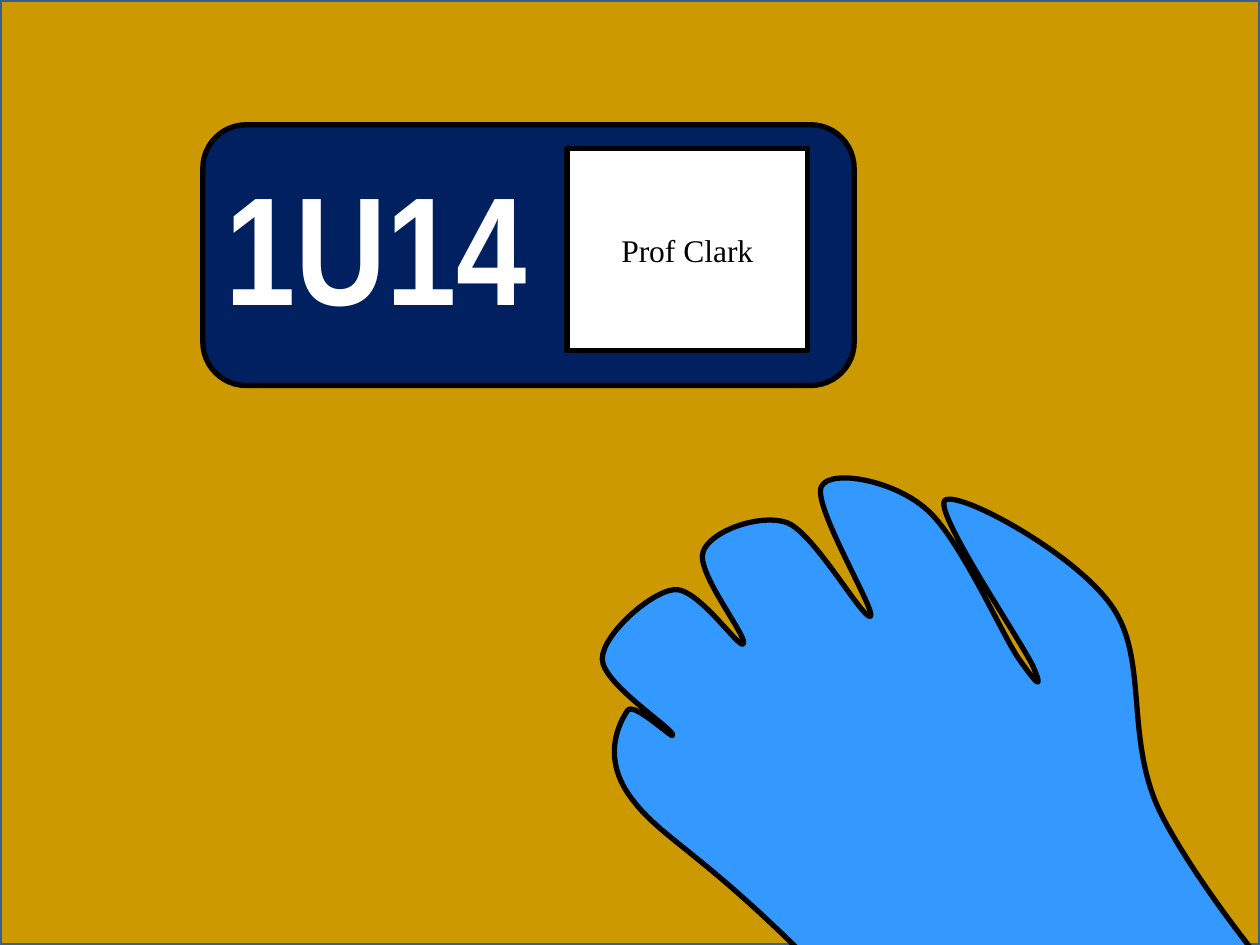
from math import cos, radians, sin

from lxml.etree import SubElement
from pptx import Presentation
from pptx.dml.color import RGBColor
from pptx.enum.shapes import MSO_SHAPE as Shape
from pptx.enum.text import MSO_ANCHOR as Anchor, MSO_AUTO_SIZE as AutoSize, PP_ALIGN as Align
from pptx.oxml.ns import qn
from pptx.util import Inches, Pt

WIDTH, HEIGHT = 10, 7.5
COLOURS = {
    "door": "CC9900", "edge": "3A5F8C", "sign": "002060", "card": "FFFFFF",
    "hand": "3399FF", "ink": "000000", "number": "FFFFFF",
}
ROOM, OCCUPANT = "1U14", "Prof Clark"
SIGN = (1.61, 0.99, 5.17, 2.07)
CARD = (4.5, 1.18, 1.91, 1.6)
NUMBER = (1.69, 1.15, 2.62, 1.58)

HAND_ANGLE = 322.7
HAND_START = (10.63, 8.31)
# Each row is one Bezier curve: two control points and an end point.
HAND_CURVES = [
    ((10.25, 7.98), (9.52, 7.05), (9.22, 6.47)),
    ((8.92, 5.88), (9.12, 5.24), (8.83, 4.82)),
    ((8.55, 4.4), (7.61, 3.89), (7.5, 3.97)),
    ((7.4, 4.05), (8.1, 5.08), (8.2, 5.29)),
    ((8.29, 5.5), (8.22, 5.42), (8.08, 5.22)),
    ((7.94, 5.01), (7.61, 4.26), (7.35, 4.04)),
    ((7.09, 3.81), (6.59, 3.72), (6.52, 3.86)),
    ((6.44, 4), (6.95, 4.84), (6.91, 4.89)),
    ((6.86, 4.94), (6.47, 4.24), (6.25, 4.15)),
    ((6.03, 4.07), (5.63, 4.22), (5.58, 4.38)),
    ((5.52, 4.54), (5.94, 5.06), (5.9, 5.11)),
    ((5.87, 5.16), (5.54, 4.66), (5.35, 4.68)),
    ((5.16, 4.7), (4.78, 5.04), (4.78, 5.23)),
    ((4.78, 5.42), (5.31, 5.76), (5.34, 5.83)),
    ((5.37, 5.9), (5.03, 5.56), (4.98, 5.64)),
    ((4.92, 5.73), (4.77, 6), (5, 6.32)),
    ((5.23, 6.64), (5.53, 6.74), (6.34, 7.54)),
    ((7.19, 8.32), (9.33, 10.46), (9.85, 11.12)),
]


def colour(name):
    return RGBColor.from_string(COLOURS[name])


def paint(shape, fill, line="ink", width=3):
    shape.shadow.inherit = False
    shape.fill.solid()
    shape.fill.fore_color.rgb = colour(fill)
    shape.line.color.rgb = colour(line)
    shape.line.width = Pt(width)
    return shape


def add_box(parent, kind, place, fill, **outline):
    return paint(parent.add_shape(kind, *map(Inches, place)), fill, **outline)


def write(shape, text, font, size, ink, bold=False, align=Align.LEFT,
          anchor=Anchor.TOP, wrap=True, auto_size=AutoSize.NONE):
    frame = shape.text_frame
    frame.auto_size, frame.word_wrap, frame.vertical_anchor = auto_size, wrap, anchor
    para = frame.paragraphs[0]
    para.alignment = align
    span = para.add_run()
    span.text = text
    span.font.name, span.font.size, span.font.bold = font, Pt(size), bold
    span.font.color.rgb = colour(ink)


def turn(point, angle):
    """Rotate a point clockwise by degrees about the slide's corner."""
    x, y = point
    c, s = cos(radians(angle)), sin(radians(angle))
    return x * c - y * s, x * s + y * c


def add_curved_shape(parent, start, curves, angle):
    """Add an open Bezier outline whose frame is rotated by the angle."""
    points = [tuple(map(Inches, turn(point, -angle)))
              for point in (start, *(point for curve in curves for point in curve))]
    builder = parent.build_freeform(*points[0])
    builder.add_line_segments(points[1:], close=False)
    shape = builder.convert_to_shape()

    outline = shape._element.xpath(".//a:path")[0]
    segments = outline.findall(qn("a:lnTo"))
    for first in range(0, len(segments), 3):
        curve = SubElement(outline, qn("a:cubicBezTo"))
        for segment in segments[first:first + 3]:
            curve.append(segment[0])
            outline.remove(segment)

    half_width, half_height = shape.width / 2, shape.height / 2
    x, y = turn((shape.left + half_width, shape.top + half_height), angle)
    shape.left, shape.top = round(x - half_width), round(y - half_height)
    shape.rotation = angle
    return shape


def main():
    deck = Presentation()
    deck.slide_width, deck.slide_height = Inches(WIDTH), Inches(HEIGHT)
    page = deck.slides.add_slide(deck.slide_layouts[6])

    add_box(page.shapes, Shape.RECTANGLE, (0, 0, WIDTH, HEIGHT), "door", line="edge", width=2)

    sign = page.shapes.add_group_shape().shapes
    add_box(sign, Shape.ROUNDED_RECTANGLE, SIGN, "sign")
    card = add_box(sign, Shape.RECTANGLE, CARD, "card")
    write(card, OCCUPANT, "Times New Roman", 18, "ink", align=Align.CENTER, anchor=Anchor.MIDDLE)
    number = sign.add_textbox(*map(Inches, NUMBER))
    write(number, ROOM, "Arial Narrow", 88, "number", bold=True, wrap=False,
          auto_size=AutoSize.SHAPE_TO_FIT_TEXT)

    paint(add_curved_shape(page.shapes, HAND_START, HAND_CURVES, HAND_ANGLE), "hand")
    deck.save("out.pptx")


if __name__ == "__main__":
    main()
